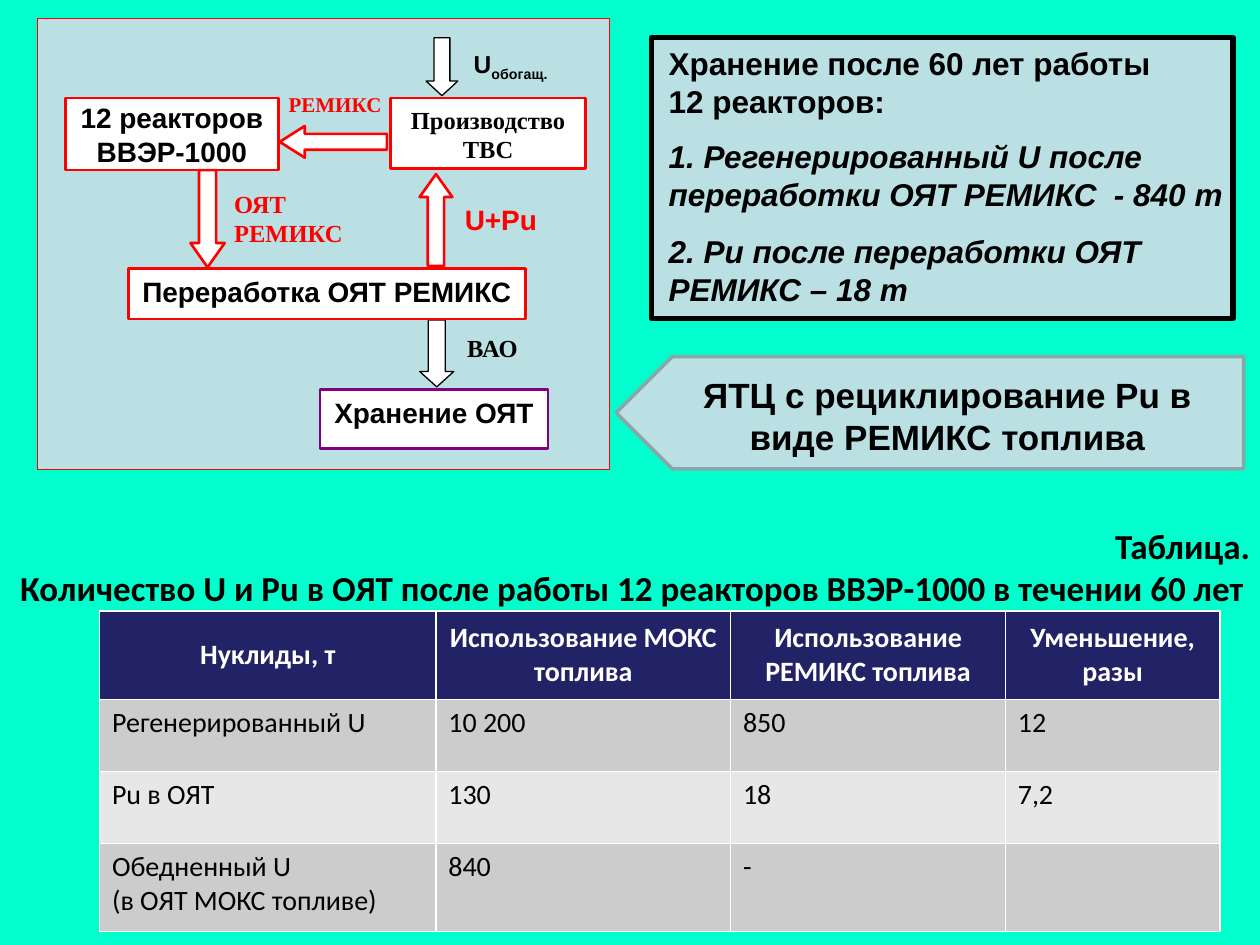
import pptx
import pptx.dml.color
import pptx.enum.shapes
import pptx.enum.text
import pptx.util

Cm = pptx.util.Cm
Pt = pptx.util.Pt
Shape = pptx.enum.shapes.MSO_SHAPE
Align = pptx.enum.text.PP_ALIGN
Anchor = pptx.enum.text.MSO_ANCHOR

RED, BLACK, WHITE, PALE = "FF0000", "000000", "FFFFFF", "BBE0E3"
PURPLE, GREY, NAVY = "800080", "8AA6A8", "222267"
SERIF = "Times New Roman"


def rgb(color):
    return pptx.dml.color.RGBColor.from_string(color)


def write(frame, text, font, size, color=BLACK, bold=True, align=Align.LEFT,
          margins=(0, 0), anchor=Anchor.TOP):
    """Fill a text frame, one paragraph a line; margins are horizontal and vertical in cm."""
    side, edge = map(Cm, margins)
    frame_format = {"word_wrap": True, "vertical_anchor": anchor,
                    "margin_left": side, "margin_right": side,
                    "margin_top": edge, "margin_bottom": edge}
    for name, value in frame_format.items():
        setattr(frame, name, value)
    frame.text = text
    run_format = {"name": font, "size": Pt(size), "bold": bold}
    for paragraph in frame.paragraphs:
        paragraph.alignment = align
        for run in paragraph.runs:
            for name, value in run_format.items():
                setattr(run.font, name, value)
            run.font.color.rgb = rgb(color)


deck = pptx.Presentation()
deck.slide_width, deck.slide_height = Cm(25.4), Cm(19.05)
slide = deck.slides.add_slide(deck.slide_layouts[5])
slide.background.fill.solid()
slide.background.fill.fore_color.rgb = rgb("00FFCC")

# Panels, process boxes and flow arrows, from back to front
outlines = [
    (Shape.PENTAGON, (12.42, 7.19, 12.65, 2.26), PALE, GREY, 2, None),
    (Shape.RECTANGLE, (0.76, 0.38, 11.53, 9.09), PALE, RED, 0.75, None),
    (Shape.DOWN_ARROW, (8.46, 6.45, 0.69, 1.35), WHITE, BLACK, 0.75, (0.5, 0.45)),
    (Shape.UP_ARROW, (8.46, 3.51, 0.66, 1.85), WHITE, RED, 1.5, (0.5, 0.7)),
    (Shape.LEFT_ARROW, (5.64, 2.54, 2.16, 0.64), WHITE, RED, 1.5, (0.5, 0.79)),
    (Shape.DOWN_ARROW, (8.59, 0.76, 0.64, 1.17), WHITE, BLACK, 0.75, (0.5, 0.46)),
    (Shape.RECTANGLE, (1.32, 1.98, 4.29, 1.45), WHITE, RED, 1.5, None),
    (Shape.RECTANGLE, (6.45, 7.85, 4.6, 1.19), WHITE, PURPLE, 1.5, None),
    (Shape.RECTANGLE, (2.59, 5.41, 8, 1.02), WHITE, RED, 1.5, None),
    (Shape.RECTANGLE, (7.87, 1.98, 3.94, 1.42), WHITE, RED, 1.5, None),
    (Shape.DOWN_ARROW, (3.84, 3.43, 0.69, 1.96), WHITE, RED, 1.5, (0.5, 0.71)),
    (Shape.RECTANGLE, (13.13, 0.76, 11.73, 5.66), PALE, BLACK, 3, None),
]
drawn = []
for kind, place, fill, line, weight, adjustments in outlines:
    shape = slide.shapes.add_shape(kind, *map(Cm, place))
    shape.shadow.inherit = False
    shape.fill.solid()
    shape.fill.fore_color.rgb = rgb(fill)
    shape.line.color.rgb = rgb(line)
    shape.line.width = Pt(weight)
    for index, value in enumerate(adjustments or ()):
        shape.adjustments[index] = value
    drawn.append(shape)

title_arrow, *_, reactors, spent_fuel, reprocessing, fabrication, _, storage = drawn
title_arrow.rotation = 180

for box, text, font, size, margins, anchor in [
    (reactors, "12 реакторов ВВЭР-1000", "Arial", 16, (0.05, 0.03), Anchor.MIDDLE),
    (spent_fuel, "Хранение ОЯТ", "Arial", 16, (0.05, 0.13), Anchor.TOP),
    (reprocessing, "Переработка ОЯТ РЕМИКС", "Arial", 16, (0.15, 0.13), Anchor.TOP),
    (fabrication, "Производство ТВС", SERIF, 14, (0.05, 0.13), Anchor.TOP),
]:
    write(box.text_frame, text, font, size, align=Align.CENTER,
          margins=margins, anchor=anchor)

# Storage after 60 years
write(storage.text_frame,
      "Хранение после 60 лет работы\v12 реакторов:\n"
      "1. Регенерированный U после переработки ОЯТ РЕМИКС  - 840 т\n"
      "2. Pu после переработки ОЯТ РЕМИКС – 18 т",
      "Arial", 18, margins=(0.05, 0.13))
storage.text_frame.margin_left = Cm(0.35)
for paragraph, gap in zip(storage.text_frame.paragraphs[1:], (10, 11)):
    paragraph.space_before = Pt(gap)
    paragraph.runs[0].font.italic = True

# Flow labels
for place, text, font, size, color in [
    ((9.37, 4.09, 1.88, 0.71), "U+Pu", "Arial", 16, RED),
    ((4.72, 3.81, 3.05, 1.19), "ОЯТ РЕМИКС", SERIF, 14, RED),
    ((5.82, 1.85, 1.98, 0.64), "РЕМИКС", SERIF, 12, RED),
    ((9.42, 6.71, 1.27, 0.64), "ВАО", SERIF, 14, BLACK),
    ((9.55, 0.99, 1.73, 0.69), "U", "Arial", 14, BLACK),
]:
    label = slide.shapes.add_textbox(*map(Cm, place))
    write(label.text_frame, text, font, size, color)

enriched = label.text_frame.paragraphs[0].add_run()
enriched.text = "обогащ."
for name, value in {"name": "Arial", "size": Pt(14), "bold": True}.items():
    setattr(enriched.font, name, value)
enriched.font.color.rgb = rgb(BLACK)
enriched.font._element.set("baseline", "-25000")

# Title, brought in front of its arrow
title = slide.shapes.title
title.left, title.top, title.width, title.height = map(Cm, (13.13, 7.39, 11.94, 1.96))
write(title.text_frame, "ЯТЦ с рециклирование Pu в виде РЕМИКС топлива", "Arial", 20,
      align=Align.CENTER, margins=(0.15, 0.13), anchor=Anchor.MIDDLE)
title.text_frame.auto_size = pptx.enum.text.MSO_AUTO_SIZE.NONE
slide.shapes._spTree.append(title._element)

# Table and its caption
caption = slide.shapes.add_textbox(*map(Cm, (0.05, 10.44, 25.4, 1.96)))
write(caption.text_frame,
      "Таблица.\n"
      "Количество U и Pu в ОЯТ после работы 12 реакторов ВВЭР-1000 в течении 60 лет",
      "Calibri", 20, align=Align.CENTER, margins=(0.25, 0.13))
caption.text_frame.paragraphs[0].alignment = Align.RIGHT

nuclides = [
    ("Нуклиды, т", "Использование МОКС топлива", "Использование РЕМИКС топлива",
     "Уменьшение, разы"),
    ("Регенерированный U", "10 200", "850", "12"),
    ("Pu в ОЯТ", "130", "18", "7,2"),
    ("Обедненный U\n(в ОЯТ МОКС топливе)", "840", "-", ""),
]
widths = (6.78, 5.94, 5.54, 4.32)
heights = (1.78, 1.45, 1.45, 1.78)
table = slide.shapes.add_table(len(heights), len(widths), Cm(2.01), Cm(12.32),
                               Cm(sum(widths)), Cm(sum(heights))).table
for column, width in zip(table.columns, widths):
    column.width = Cm(width)
for row_index, (row, height) in enumerate(zip(table.rows, heights)):
    row.height = Cm(height)
    header = row_index == 0
    row_fill = NAVY if header else ("E7E7E7", "CCCCCC")[row_index % 2]
    for cell, text in zip(row.cells, nuclides[row_index]):
        cell.fill.solid()
        cell.fill.fore_color.rgb = rgb(row_fill)
        write(cell.text_frame, text, "Calibri", 16,
              color=WHITE if header else BLACK, bold=header,
              align=Align.CENTER if header else Align.LEFT)
        cell.vertical_anchor = Anchor.MIDDLE if header else Anchor.TOP
        cell.margin_left = cell.margin_right = Cm(0.25)
        cell.margin_top = cell.margin_bottom = Cm(0.13)

deck.save("out.pptx")
